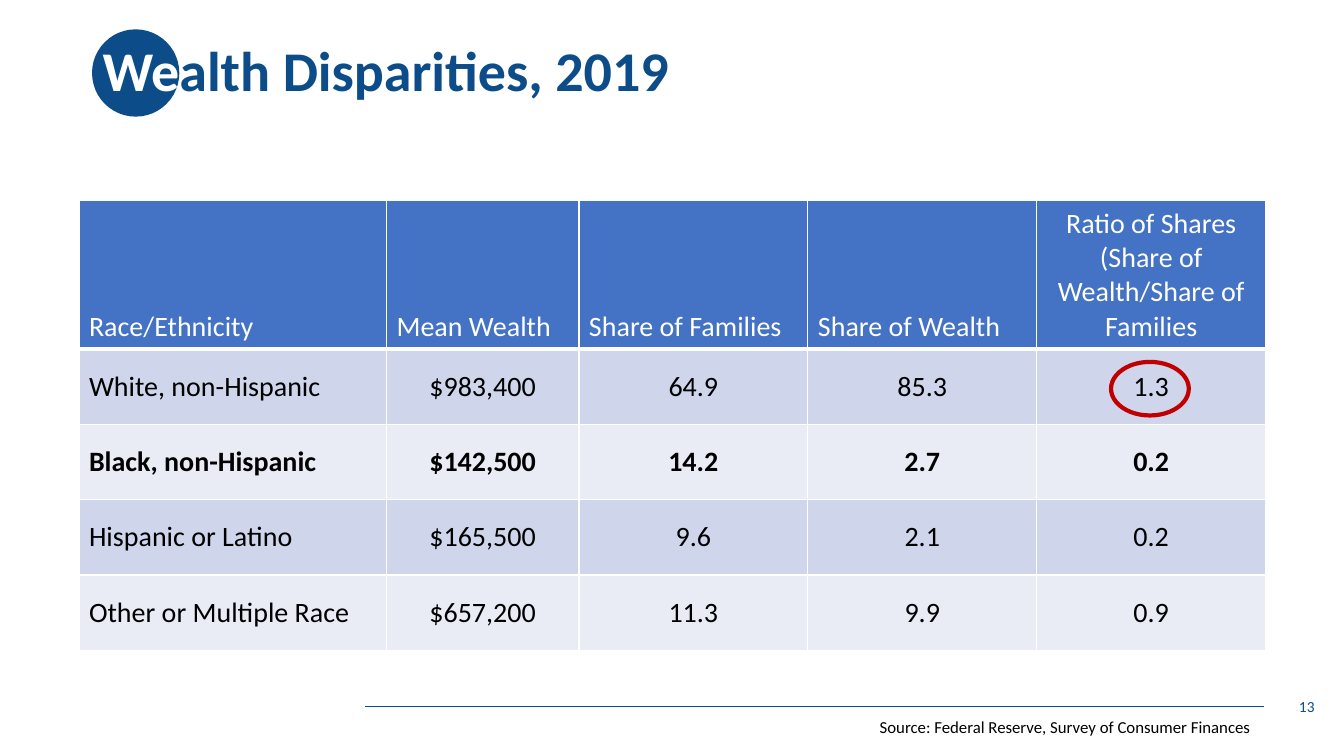
"""Build the wealth disparities slide with its table of shares by race and ethnicity."""
from pptx import Presentation
from pptx.dml.color import RGBColor
from pptx.enum.shapes import MSO_CONNECTOR, MSO_SHAPE
from pptx.enum.text import MSO_ANCHOR, PP_ALIGN
from pptx.oxml import parse_xml
from pptx.oxml.ns import nsdecls
from pptx.util import Cm, Pt

OVAL = MSO_SHAPE.OVAL
STRAIGHT = MSO_CONNECTOR.STRAIGHT
MIDDLE, BOTTOM = MSO_ANCHOR.MIDDLE, MSO_ANCHOR.BOTTOM
LEFT, CENTER, RIGHT = PP_ALIGN.LEFT, PP_ALIGN.CENTER, PP_ALIGN.RIGHT
FONT = "Calibri"
COLORS = {
    "navy": "0C4C88",
    "white": "FFFFFF",
    "black": "000000",
    "header": "4472C4",
    "odd_row": "CFD5EA",
    "even_row": "E9EBF5",
    "red": "C00000",
}


def color(name):
    return RGBColor.from_string(COLORS[name])


def style_runs(paragraph, size, color_name, bold=False):
    for run in paragraph.runs:
        run.font.name = FONT
        run.font.size = Pt(size)
        run.font.bold = bold
        run.font.color.rgb = color(color_name)


presentation = Presentation()
presentation.slide_width = Cm(33.87)
presentation.slide_height = Cm(19.05)
slide = presentation.slides.add_slide(presentation.slide_layouts[5])

title = slide.shapes.title
title.left, title.top, title.width, title.height = Cm(2.33), Cm(0), Cm(29.21), Cm(3.68)
title.text_frame.vertical_anchor = MIDDLE
paragraph = title.text_frame.paragraphs[0]
paragraph.alignment = LEFT
paragraph.line_spacing = 0.9
for text in ("We", "alth Disparities, 2019"):
    paragraph.add_run().text = text
style_runs(paragraph, 40, "navy", bold=True)
paragraph.runs[0].font.color.rgb = color("white")

title_circle = slide.shapes.add_shape(OVAL, Cm(2.32), Cm(0.74), Cm(2.2), Cm(2.2))
title_circle.shadow.inherit = False
title_circle.fill.solid()
title_circle.fill.fore_color.rgb = color("navy")
title_circle.line.fill.background()
title.element.addprevious(title_circle.element)

footer_line = slide.shapes.add_connector(STRAIGHT, Cm(9.2), Cm(17.8), Cm(31.85), Cm(17.8))
footer_line.line.color.rgb = color("navy")
footer_line.line.width = Pt(0.5)
footer_line.element.spPr.append(parse_xml(f"<a:effectLst {nsdecls('a')}/>"))

rows = [
    ("Race/Ethnicity", "Mean Wealth", "Share of Families", "Share of Wealth",
     "Ratio of Shares (Share of Wealth/Share of Families"),
    ("White, non-Hispanic", "$983,400", "64.9", "85.3", "1.3"),
    ("Black, non-Hispanic", "$142,500", "14.2", "2.7", "0.2"),
    ("Hispanic or Latino", "$165,500", "9.6", "2.1", "0.2"),
    ("Other or Multiple Race", "$657,200", "11.3", "9.9", "0.9"),
]
column_widths = [7.75, 4.85, 5.77, 5.77, 5.77]
row_heights = [3.73] + [1.9] * 4
table = slide.shapes.add_table(
    len(rows), len(column_widths), Cm(1.99), Cm(5.06),
    Cm(sum(column_widths)), Cm(sum(row_heights))).table
for column, width in zip(table.columns, column_widths):
    column.width = Cm(width)

for row_index, values in enumerate(rows):
    table.rows[row_index].height = Cm(row_heights[row_index])
    is_header = row_index == 0
    band = "odd_row" if row_index % 2 else "even_row"
    border_widths = {"lnL": 1, "lnR": 1, "lnT": 3 if row_index == 1 else 1, "lnB": 3 if is_header else 1}
    for column_index, value in enumerate(values):
        cell = table.cell(row_index, column_index)
        for side, width in border_widths.items():
            cell._tc.get_or_add_tcPr().append(parse_xml(
                f'<a:{side} {nsdecls("a")} w="{Pt(width)}"><a:solidFill>'
                f'<a:srgbClr val="{COLORS["white"]}"/></a:solidFill></a:{side}>'))
        cell.fill.solid()
        cell.fill.fore_color.rgb = color("header" if is_header else band)
        cell.vertical_anchor = BOTTOM if is_header else MIDDLE
        cell.text_frame.text = value
        paragraph = cell.text_frame.paragraphs[0]
        left_aligned = column_index == 0 or (is_header and column_index < 4)
        paragraph.alignment = LEFT if left_aligned else CENTER
        style_runs(paragraph, 20, "white" if is_header else "black",
                   bold=values[0].startswith("Black"))

ratio_ring = slide.shapes.add_shape(OVAL, Cm(28), Cm(9.12), Cm(1.96), Cm(1.35))
ratio_ring.shadow.inherit = False
ratio_ring.fill.background()
ratio_ring.line.color.rgb = color("red")
ratio_ring.line.width = Pt(3)

footers = [
    ("13", 25.76, 17.3, 7.62, 1.02, 11, "navy", RIGHT, True),
    ("Source: Federal Reserve, Survey of Consumer Finances",
     21.92, 17.93, 9.96, 0.77, 12, "black", LEFT, False),
]
for text, left, top, width, height, size, color_name, alignment, wrap in footers:
    footer = slide.shapes.add_textbox(Cm(left), Cm(top), Cm(width), Cm(height))
    footer.text_frame.word_wrap = wrap
    footer.text_frame.vertical_anchor = MIDDLE
    footer.text_frame.text = text
    paragraph = footer.text_frame.paragraphs[0]
    paragraph.alignment = alignment
    style_runs(paragraph, size, color_name)

presentation.save("out.pptx")
